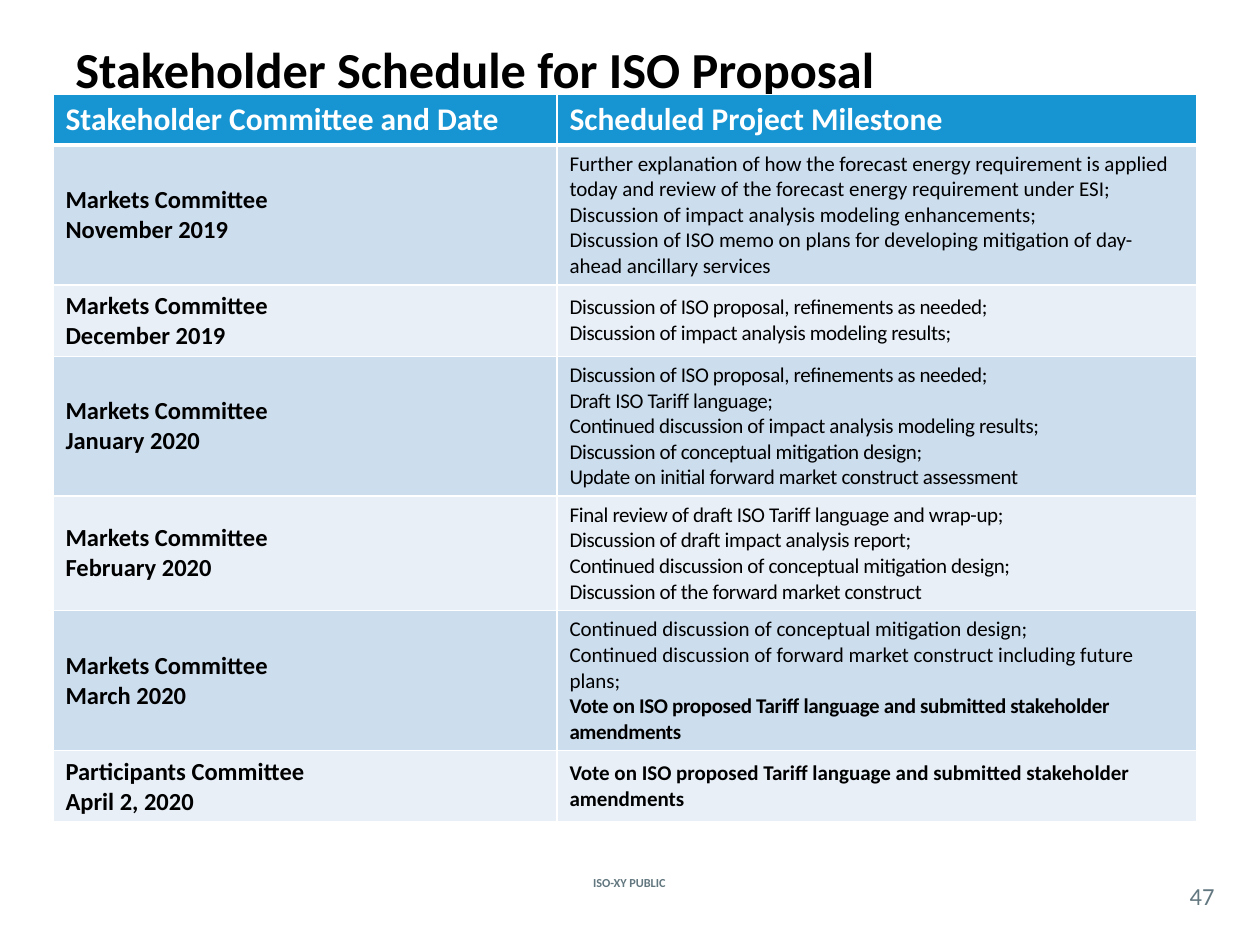
from pptx import Presentation
from pptx.dml.color import RGBColor
from pptx.enum.text import MSO_ANCHOR as Anchor, PP_ALIGN as Align
from pptx.oxml import parse_xml
from pptx.oxml.ns import nsdecls
from pptx.util import Inches, Pt

COLORS = {
    "black": "000000",
    "white": "FFFFFF",
    "gray": "62777F",
    "header": "1795D2",
    "dark_band": "CCDDEE",
    "light_band": "E8EFF7",
}
FONT = "Calibri"
TIGHT = -0.2

HEADINGS = ["Stakeholder Committee and Date", "Scheduled Project Milestone"]
PROPOSAL = "Discussion of ISO proposal, refinements as needed;"
MITIGATION = "Continued discussion of conceptual mitigation design;"
VOTE = "Vote on ISO proposed Tariff language and submitted stakeholder amendments"
MARKETS = "Markets Committee"

# Each row: height, committee, date, milestones as (text, letter spacing)
SCHEDULE = [
    (1.11, MARKETS, "November 2019", [
        ("Further explanation of how the forecast energy requirement is applied today "
         "and review of the forecast energy requirement under ESI;", 0),
        ("Discussion of impact analysis modeling enhancements;", 0),
        ("Discussion of ISO memo on plans for developing mitigation of "
         "day-ahead ancillary services", 0),
    ]),
    (0.56, MARKETS, "December 2019", [
        (PROPOSAL, TIGHT),
        ("Discussion of impact analysis modeling results;", TIGHT),
    ]),
    (1.11, MARKETS, "January 2020", [
        (PROPOSAL, TIGHT),
        ("Draft ISO Tariff language;", TIGHT),
        ("Continued discussion of impact analysis modeling results;", TIGHT),
        ("Discussion of conceptual mitigation design;", TIGHT),
        ("Update on initial forward market construct assessment", TIGHT),
    ]),
    (0.91, MARKETS, "February 2020", [
        ("Final review of draft ISO Tariff language and wrap-up;", TIGHT),
        ("Discussion of draft impact analysis report;", TIGHT),
        (MITIGATION, TIGHT),
        ("Discussion of the forward market construct", TIGHT),
    ]),
    (1.11, MARKETS, "March 2020", [
        (MITIGATION, 0),
        ("Continued discussion of forward market construct including future plans;", 0),
        (VOTE, TIGHT),
    ]),
    (0.56, "Participants Committee", "April 2, 2020", [(VOTE, 0)]),
]


def write_line(frame, text, *, size, color="black", bold=False, align=None, spacing=0):
    """Write one formatted paragraph, using the first one while it is empty."""
    paragraph = frame.paragraphs[0]
    if paragraph.runs:
        paragraph = frame.add_paragraph()
    paragraph.alignment = align
    run = paragraph.add_run()
    run.text = text
    run.font.name = FONT
    run.font.size = Pt(size)
    run.font.bold = bold
    run.font.color.rgb = RGBColor.from_string(COLORS[color])
    if spacing:
        run._r.get_or_add_rPr().set("spc", str(round(spacing * 100)))


def add_label(slide, box, text, margin=None, **style):
    """Add a vertically centred text box in the given box."""
    frame = slide.shapes.add_textbox(*map(Inches, box)).text_frame
    frame.word_wrap = True
    frame.vertical_anchor = Anchor.MIDDLE
    if margin is not None:
        frame.margin_left = frame.margin_right = Inches(margin)
        frame.margin_top = frame.margin_bottom = Inches(margin)
    write_line(frame, text, **style)


def style_cell(cell, fill, top=1, bottom=1):
    """Give a cell white borders, a solid fill and middle anchoring."""
    properties = cell._tc.get_or_add_tcPr()
    for side, width in (("L", 1), ("R", 1), ("T", top), ("B", bottom)):
        properties.append(parse_xml(
            f'<a:ln{side} {nsdecls("a")} w="{Pt(width)}"><a:solidFill>'
            f'<a:srgbClr val="{COLORS["white"]}"/></a:solidFill></a:ln{side}>'
        ))
    cell.fill.solid()
    cell.fill.fore_color.rgb = RGBColor.from_string(COLORS[fill])
    cell.vertical_anchor = Anchor.MIDDLE


def add_schedule(slide, left, top, column_widths, header_height):
    """Add the table of committees and milestones at the given corner."""
    heights = [header_height] + [row[0] for row in SCHEDULE]
    table = slide.shapes.add_table(
        len(heights), len(column_widths), Inches(left), Inches(top),
        Inches(sum(column_widths)), Inches(sum(heights)),
    ).table
    for column, width in zip(table.columns, column_widths):
        column.width = Inches(width)
    for row, height in zip(table.rows, heights):
        row.height = Inches(height)

    for column, heading in enumerate(HEADINGS):
        cell = table.cell(0, column)
        style_cell(cell, "header", bottom=3)
        write_line(cell.text_frame, heading, size=18, color="white", bold=True)

    for index, (_, committee, date, milestones) in enumerate(SCHEDULE, start=1):
        meeting, plan = table.cell(index, 0), table.cell(index, 1)
        for cell in (meeting, plan):
            style_cell(cell, "dark_band" if index % 2 else "light_band",
                       top=3 if index == 1 else 1)
        for text in (committee, date):
            write_line(meeting.text_frame, text, size=14, bold=True)
        for text, spacing in milestones:
            write_line(plan.text_frame, text, size=12, bold=text == VOTE, spacing=spacing)


def add_footer(slide, label_box, number_box):
    """Add the classification label and the slide number."""
    add_label(slide, label_box, "ISO-XY PUBLIC", size=7, color="gray", bold=True,
              align=Align.CENTER)
    add_label(slide, number_box, "47", margin=0, size=14, color="gray",
              align=Align.CENTER)


def main():
    """Build the stakeholder schedule slide and save it."""
    presentation = Presentation()
    presentation.slide_width = Inches(10)
    presentation.slide_height = Inches(7.5)
    slide = presentation.slides.add_slide(presentation.slide_layouts[6])
    add_footer(slide, (4.26, 6.87, 1.47, 0.27), (9.33, 6.96, 0.42, 0.29))
    add_label(slide, (0.5, 0.25, 9, 0.58), "Stakeholder Schedule for ISO Proposal",
              size=28.8, bold=True)
    add_schedule(slide, 0.42, 0.75, (4, 5.08), 0.39)
    presentation.save("out.pptx")


if __name__ == "__main__":
    main()
